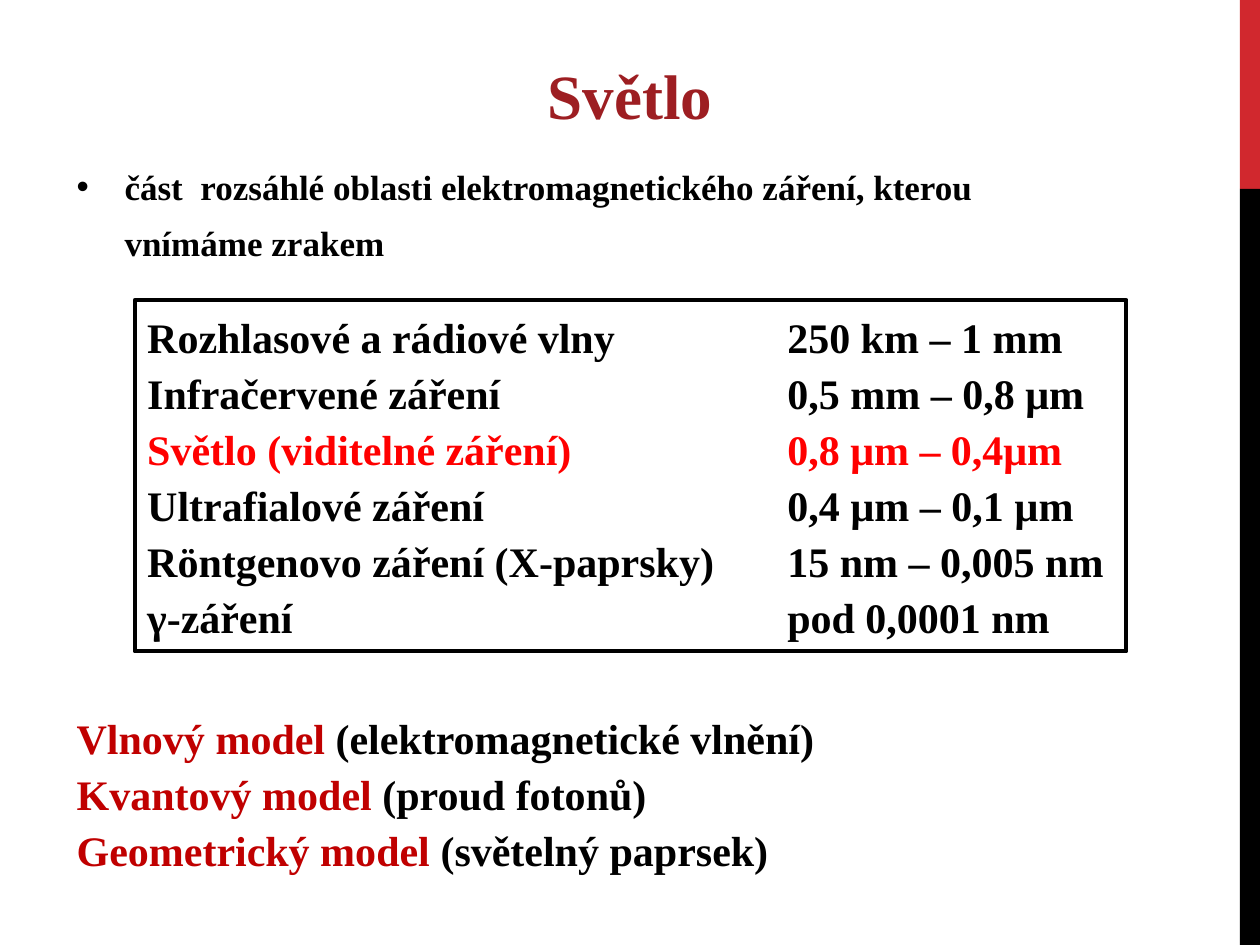
from lxml import etree
from pptx import Presentation
from pptx.dml.color import RGBColor
from pptx.enum.shapes import MSO_SHAPE
from pptx.enum.text import MSO_ANCHOR, PP_ALIGN
from pptx.oxml.ns import qn
from pptx.util import Inches, Pt

RECTANGLE = MSO_SHAPE.RECTANGLE
TOP = MSO_ANCHOR.TOP
LEFT, CENTER = PP_ALIGN.LEFT, PP_ALIGN.CENTER
FONT = "Times New Roman"
BLACK, WHITE, RED, DARK_RED = "000000", "FFFFFF", "FF0000", "C00000"

SPECTRUM = [
    ("Rozhlasové a rádiové vlny", "250 km – 1 mm", BLACK),
    ("Infračervené záření", "0,5 mm – 0,8 μm", BLACK),
    ("Světlo (viditelné záření)", "0,8 μm – 0,4μm", RED),
    ("Ultrafialové záření", "0,4 µm – 0,1 µm", BLACK),
    ("Röntgenovo záření (X-paprsky)", "15 nm – 0,005 nm", BLACK),
    ("γ-záření", "pod 0,0001 nm", BLACK),
]
MODELS = [
    ("Vlnový model ", "(elektromagnetické vlnění)"),
    ("Kvantový model ", "(proud fotonů)"),
    ("Geometrický model ", "(světelný paprsek)"),
]


def color(hex_string):
    """Turn a hex string into a colour."""
    return RGBColor.from_string(hex_string)


def add_rectangle(slide, box, fill, line=None):
    """Add a flat rectangle, outlined only when a line colour is given."""
    rectangle = slide.shapes.add_shape(RECTANGLE, *map(Inches, box))
    rectangle.shadow.inherit = False
    rectangle.fill.solid()
    rectangle.fill.fore_color.rgb = color(fill)
    if line:
        rectangle.line.color.rgb = color(line)
        rectangle.line.width = Pt(2.25)
    else:
        rectangle.line.fill.background()
    return rectangle


def add_text_frame(slide, box):
    """Add a wrapping text box and return its frame."""
    frame = slide.shapes.add_textbox(*map(Inches, box)).text_frame
    frame.word_wrap = True
    return frame


def write_paragraph(frame, index, parts, size, spacing=Pt(32), align=LEFT):
    """Write (text, colour) parts as one bold paragraph."""
    paragraph = frame.add_paragraph() if index else frame.paragraphs[0]
    paragraph.alignment = align
    paragraph.line_spacing = spacing
    paragraph.font.name = FONT
    paragraph.font.size = Pt(size)
    paragraph.font.bold = True
    for text, hex_string in parts:
        run = paragraph.add_run()
        run.text = text
        run.font.color.rgb = color(hex_string)
    return paragraph


def add_bullet(paragraph, indent):
    """Give a paragraph a hanging round bullet."""
    properties = paragraph._p.get_or_add_pPr()
    properties.set("marL", str(Inches(indent)))
    properties.set("indent", str(-Inches(indent)))
    etree.SubElement(properties, qn("a:buFont")).set("typeface", "Arial")
    etree.SubElement(properties, qn("a:buChar")).set("char", "•")


def add_tab_stop(paragraph, position):
    """Set one left tab stop on a paragraph."""
    stops = etree.SubElement(paragraph._p.get_or_add_pPr(), qn("a:tabLst"))
    stop = etree.SubElement(stops, qn("a:tab"))
    stop.set("pos", str(Inches(position)))
    stop.set("algn", "l")


def add_spectrum(slide):
    """Add the framed list of radiation kinds and wavelengths."""
    frame = add_rectangle(slide, (1.07, 2.38, 7.87, 2.79), WHITE, BLACK).text_frame
    frame.word_wrap = True
    frame.vertical_anchor = TOP
    for index, (radiation, wavelength, hex_string) in enumerate(SPECTRUM):
        parts = [(f"{radiation}\t{wavelength}", hex_string)]
        add_tab_stop(write_paragraph(frame, index, parts, 24), 5.08)


def add_models(slide):
    """Add the three models of light."""
    frame = add_text_frame(slide, (0.51, 5.56, 6.11, 1.45))
    for index, (model, meaning) in enumerate(MODELS):
        write_paragraph(frame, index, [(model, DARK_RED), (meaning, BLACK)], 24)


def main():
    """Build and save the slide."""
    presentation = Presentation()
    presentation.slide_width = Inches(10)
    presentation.slide_height = Inches(7.5)
    slide = presentation.slides.add_slide(presentation.slide_layouts[6])

    add_rectangle(slide, (9.84, 0, 0.16, 1.5), "D1282E")
    add_rectangle(slide, (9.84, 1.5, 0.16, 6), BLACK)

    definition = "část  rozsáhlé oblasti elektromagnetického záření, kterou vnímáme zrakem"
    definition_frame = add_text_frame(slide, (0.51, 1.15, 8.42, 0.87))
    add_bullet(write_paragraph(definition_frame, 0, [(definition, BLACK)], 20), 0.38)

    add_spectrum(slide)
    title_frame = add_text_frame(slide, (4.24, 0.4, 1.52, 0.71))
    title_frame.word_wrap = False
    write_paragraph(title_frame, 0, [("Světlo", "9D1E22")], 36, 1.0, CENTER)
    add_models(slide)

    presentation.save("out.pptx")


if __name__ == "__main__":
    main()
